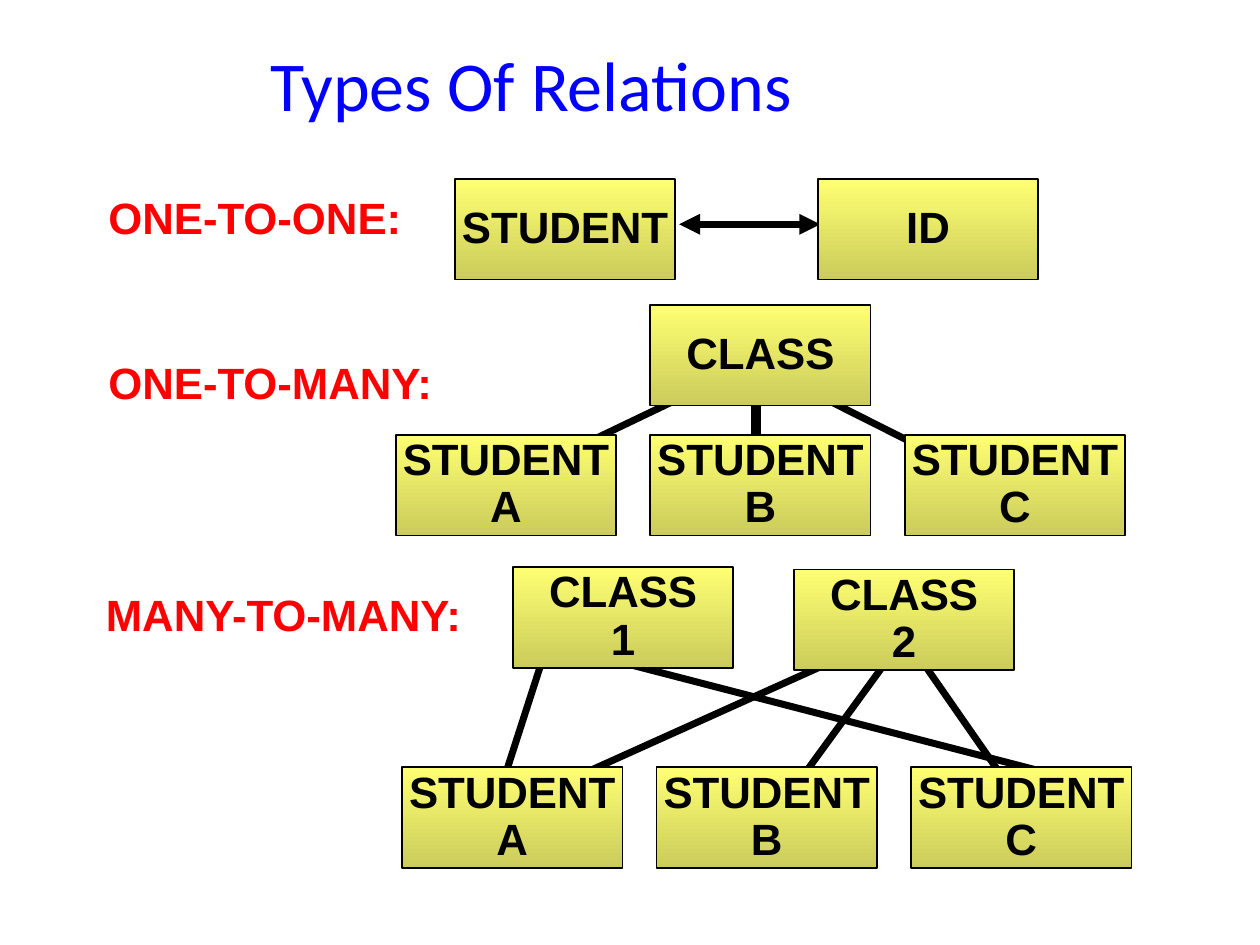
from lxml import etree
from pptx import Presentation
from pptx.dml.color import RGBColor
from pptx.enum import shapes, text
from pptx.oxml.ns import qn
from pptx.util import Inches, Pt

BLACK, RED, BLUE = "000000", "FF0000", "0000FF"
BOX_TOP, BOX_BOTTOM = "FEFF72", "CBCC5B"
BOX_W, BOX_H = 1.75, 0.8
STUDENT_PITCH = 2.02
STUDENTS = ["STUDENT\nA", "STUDENT\nB", "STUDENT\nC"]


def student_row(left, top):
    return [(name, left + i * STUDENT_PITCH, top) for i, name in enumerate(STUDENTS)]


# Content: label (text, left, top, width), lines (x1, y1, x2, y2, points),
# boxes (text, left, top)
TITLE = "Types Of Relations"
RELATIONS = [
    {
        "label": ("ONE-TO-ONE:", 0.77, 1.51, 2.61),
        "lines": [(5.39, 1.78, 6.51, 1.78, 4)],
        "arrows": True,
        "boxes": [("STUDENT", 3.61, 1.42), ("ID", 6.49, 1.42)],
    },
    {
        "label": ("ONE-TO-MANY:", 0.77, 2.82, 2.78),
        "lines": [
            (6.06, 2.92, 7.91, 3.85, 4),
            (5.98, 2.88, 4.02, 3.82, 4),
            (6, 3, 6, 3.75, 6),
        ],
        "arrows": False,
        "boxes": [("CLASS", 5.16, 2.42)] + student_row(3.14, 3.45),
    },
    {
        "label": ("MANY-TO-MANY:", 0.75, 4.66, 3.05),
        "lines": [
            (4.44, 5.13, 8.53, 6.19, 4),
            (7.18, 5.05, 6.16, 6.45, 4),
            (4.32, 5.19, 3.91, 6.46, 4),
            (7.16, 5, 4.23, 6.32, 4),
            (7.18, 5.05, 8.23, 6.56, 4),
        ],
        "arrows": False,
        "boxes": student_row(3.19, 6.09)
        + [("CLASS\n1", 4.07, 4.5), ("CLASS\n2", 6.3, 4.52)],
    },
]


def color(value):
    return RGBColor.from_string(value)


def write(shape, words, size, font, ink, bold, align, spacing=None):
    frame = shape.text_frame
    frame.text = words
    frame.word_wrap = False
    frame.margin_left = frame.margin_right = Inches(0.09)
    frame.margin_top = frame.margin_bottom = Inches(0.05)
    for para in frame.paragraphs:
        para.alignment = align
        para.line_spacing = spacing
        for span in para.runs:
            span.font.size = Pt(size)
            span.font.name = font
            span.font.bold = bold
            span.font.color.rgb = color(ink)


def add_label(group, words, left, top, width):
    label = group.shapes.add_textbox(Inches(left), Inches(top), Inches(width), Inches(0.47))
    write(label, words, 25, "Arial", RED, True, text.PP_ALIGN.LEFT, 0.9)
    label.text_frame.auto_size = text.MSO_AUTO_SIZE.SHAPE_TO_FIT_TEXT


def add_line(group, x1, y1, x2, y2, points, arrows):
    line = group.shapes.add_connector(
        shapes.MSO_CONNECTOR.STRAIGHT, Inches(x1), Inches(y1), Inches(x2), Inches(y2))
    line.line.color.rgb = color(BLACK)
    line.line.width = Pt(points)
    if arrows:
        outline = line.line._get_or_add_ln()
        for end in ("a:headEnd", "a:tailEnd"):
            etree.SubElement(outline, qn(end), type="triangle")
    etree.SubElement(line._element.spPr, qn("a:effectLst"))


def add_box(group, words, left, top):
    box = group.shapes.add_shape(
        shapes.MSO_SHAPE.RECTANGLE, Inches(left), Inches(top), Inches(BOX_W), Inches(BOX_H))
    box.shadow.inherit = False
    box.fill.gradient()
    box.fill.gradient_angle = 270
    for stop, value, place in zip(box.fill.gradient_stops, (BOX_TOP, BOX_BOTTOM), (0, 1)):
        stop.color.rgb = color(value)
        stop.position = place
    box.line.color.rgb = color(BLACK)
    box.line.width = Pt(1)
    write(box, words, 25, "Arial", BLACK, True, text.PP_ALIGN.CENTER, 0.9)
    box.text_frame.vertical_anchor = text.MSO_ANCHOR.MIDDLE


def main():
    deck = Presentation()
    deck.slide_width, deck.slide_height = Inches(10), Inches(7.5)
    page = deck.slides.add_slide(deck.slide_layouts[5])

    # Title
    title = page.shapes.title
    title.left, title.top = Inches(1.83), Inches(0.28)
    title.width, title.height = Inches(4.77), Inches(0.76)
    write(title, TITLE, 40, "Calibri", BLUE, False, text.PP_ALIGN.CENTER)
    title.text_frame.vertical_anchor = text.MSO_ANCHOR.TOP
    title.text_frame.auto_size = text.MSO_AUTO_SIZE.SHAPE_TO_FIT_TEXT

    # One group per relation, with the lines behind the boxes
    for relation in RELATIONS:
        group = page.shapes.add_group_shape()
        add_label(group, *relation["label"])
        for line in relation["lines"]:
            add_line(group, *line, relation["arrows"])
        for box in relation["boxes"]:
            add_box(group, *box)

    deck.save("out.pptx")


if __name__ == "__main__":
    main()
